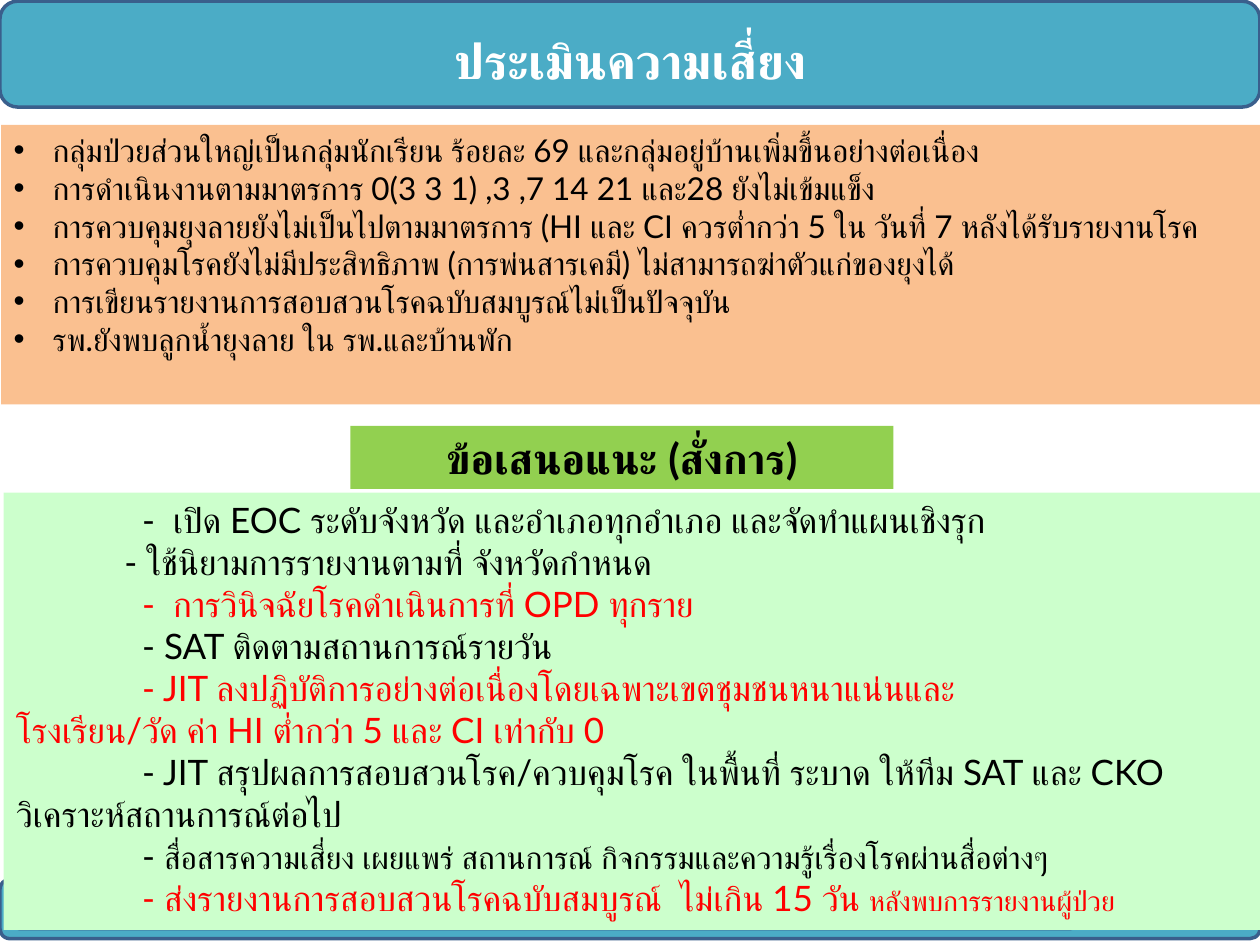
"""Build the risk assessment and recommendations slide."""
from dataclasses import dataclass

from lxml import etree
from pptx import Presentation
from pptx.dml.color import RGBColor
from pptx.enum.shapes import MSO_SHAPE
from pptx.enum.text import MSO_ANCHOR, PP_ALIGN
from pptx.oxml.ns import qn
from pptx.util import Inches, Pt

ROUNDED = MSO_SHAPE.ROUNDED_RECTANGLE
RECTANGLE = MSO_SHAPE.RECTANGLE
CENTER, LEFT = PP_ALIGN.CENTER, PP_ALIGN.LEFT
MIDDLE, TOP = MSO_ANCHOR.MIDDLE, MSO_ANCHOR.TOP
FONT = "Lato"
BLACK, WHITE, RED = "000000", "FFFFFF", "FF0000"
TEAL, NAVY = "4BACC6", "3A5F8C"
ORANGE, GREEN, PALE_GREEN = "FAC090", "92D050", "CCFFCC"


@dataclass
class Span:
    """A piece of text in one format."""
    text: str
    size: int = 20
    color: str = BLACK
    bold: bool = False


@dataclass
class Line:
    """A paragraph with its indents in inches."""
    spans: list[Span]
    first_indent: float = 0
    margin: float = 0
    bullet: str = ""
    alignment: PP_ALIGN = LEFT


@dataclass
class Box:
    """A filled shape, placed in inches."""
    left: float
    top: float
    width: float
    height: float
    fill: str
    outline: str = ""
    preset: MSO_SHAPE = RECTANGLE


TITLE = Line([Span("ประเมินความเสี่ยง", 28, WHITE, True)], alignment=CENTER)
BARS = [
    Box(0, 0.01, 10, 0.84, TEAL, NAVY, ROUNDED),
    Box(0, 6.98, 10, 0.47, TEAL, NAVY, ROUNDED),
    Box(0.1, 7.06, 8.45, 0.31, WHITE, NAVY, ROUNDED),
]
RISKS = [
    "กลุ่มป่วยส่วนใหญ่เป็นกลุ่มนักเรียน ร้อยละ 69 และกลุ่มอยู่บ้านเพิ่มขึ้นอย่างต่อเนื่อง",
    "การดำเนินงานตามมาตรการ 0(3 3 1) ,3 ,7 14 21 และ28 ยังไม่เข้มแข็ง",
    "การควบคุมยุงลายยังไม่เป็นไปตามมาตรการ (HI และ CI ควรต่ำกว่า 5 ใน วันที่ 7 หลังได้รับรายงานโรค",
    "การควบคุมโรคยังไม่มีประสิทธิภาพ (การพ่นสารเคมี) ไม่สามารถฆ่าตัวแก่ของยุงได้",
    "การเขียนรายงานการสอบสวนโรคฉบับสมบูรณ์ไม่เป็นปัจจุบัน",
    "รพ.ยังพบลูกน้ำยุงลาย ใน รพ.และบ้านพัก",
]
ORDERS = [
    Line([Span("-  เปิด EOC ระดับจังหวัด และอำเภอทุกอำเภอ และจัดทำแผนเชิงรุก")], 1),
    Line([Span("- ใช้นิยามการรายงานตามที่ จังหวัดกำหนด")], 0.86),
    Line([Span("-  การวินิจฉัยโรคดำเนินการที่ OPD ทุกราย", color=RED)], 1),
    Line([Span("- SAT ติดตามสถานการณ์รายวัน")], 1),
    Line([Span("- JIT ลงปฏิบัติการอย่างต่อเนื่องโดยเฉพาะเขตชุมชนหนาแน่นและ", color=RED)], 1),
    Line([Span("โรงเรียน/วัด ค่า HI ต่ำกว่า 5 และ CI เท่ากับ 0", color=RED)]),
    Line([Span("- JIT สรุปผลการสอบสวนโรค/ควบคุมโรค ในพื้นที่ ระบาด ให้ทีม SAT และ CKO "
               "วิเคราะห์สถานการณ์ต่อไป")], 1),
    Line([Span("- "),
          Span("สื่อสารความเสี่ยง เผยแพร่ สถานการณ์ กิจกรรมและความรู้เรื่องโรคผ่านสื่อต่างๆ", 18)], 1),
    Line([Span("- ส่งรายงานการสอบสวนโรคฉบับสมบูรณ์  ไม่เกิน 15 วัน ", color=RED),
          Span("หลังพบการรายงานผู้ป่วย", 16, RED)], 1),
]
PANELS = [
    (Box(0.01, 0.99, 10.02, 2.22, ORANGE),
     [Line([Span(risk, 18)], -0.31, 0.31, "•") for risk in RISKS]),
    (Box(2.78, 3.38, 4.31, 0.5, GREEN),
     [Line([Span("ข้อเสนอแนะ (สั่งการ)", 24, bold=True)], alignment=CENTER)]),
    (Box(0.03, 3.91, 10, 3.47, PALE_GREEN), ORDERS),
]


def rgb(color: str) -> RGBColor:
    """Turn a hex string into a colour."""
    return RGBColor.from_string(color)


def add_box(slide, box: Box):
    """Draw a filled shape and return it."""
    shape = slide.shapes.add_shape(
        box.preset, Inches(box.left), Inches(box.top), Inches(box.width), Inches(box.height))
    shape.shadow.inherit = False
    shape.fill.solid()
    shape.fill.fore_color.rgb = rgb(box.fill)
    if box.outline:
        shape.line.color.rgb = rgb(box.outline)
        shape.line.width = Pt(2)
    else:
        shape.line.fill.background()
    return shape


def write_line(paragraph, line: Line) -> None:
    """Fill a paragraph with the formatted spans of a line."""
    paragraph.alignment = line.alignment
    properties = paragraph._p.get_or_add_pPr()
    properties.set("marL", str(Inches(line.margin)))
    properties.set("indent", str(Inches(line.first_indent)))
    if line.bullet:
        etree.SubElement(properties, qn("a:buFont")).set("typeface", "Arial")
        etree.SubElement(properties, qn("a:buChar")).set("char", line.bullet)
    for span in line.spans:
        run = paragraph.add_run()
        run.text = span.text
        run.font.name = FONT
        run.font.size = Pt(span.size)
        run.font.bold = span.bold
        run.font.color.rgb = rgb(span.color)


def write_lines(text_frame, lines: list[Line], anchor: MSO_ANCHOR) -> None:
    """Write one paragraph for each line."""
    text_frame.word_wrap = True
    text_frame.vertical_anchor = anchor
    for index, line in enumerate(lines):
        paragraph = text_frame.add_paragraph() if index else text_frame.paragraphs[0]
        write_line(paragraph, line)


def place_title(slide) -> None:
    """Write the title and bring it in front of the header bar."""
    title = slide.shapes.title
    title.left, title.top = Inches(0), Inches(0.34)
    title.width, title.height = Inches(10), Inches(0.35)
    write_lines(title.text_frame, [TITLE], MIDDLE)
    title.text_frame.paragraphs[0].line_spacing = 0.8
    slide.shapes._spTree.append(title._element)


def main() -> None:
    """Build and save the presentation."""
    presentation = Presentation()
    presentation.slide_width, presentation.slide_height = Inches(10), Inches(7.5)
    slide = presentation.slides.add_slide(presentation.slide_layouts[5])
    for bar in BARS:
        add_box(slide, bar)
    place_title(slide)
    for box, lines in PANELS:
        write_lines(add_box(slide, box).text_frame, lines, TOP)
    presentation.save("out.pptx")


if __name__ == "__main__":
    main()
